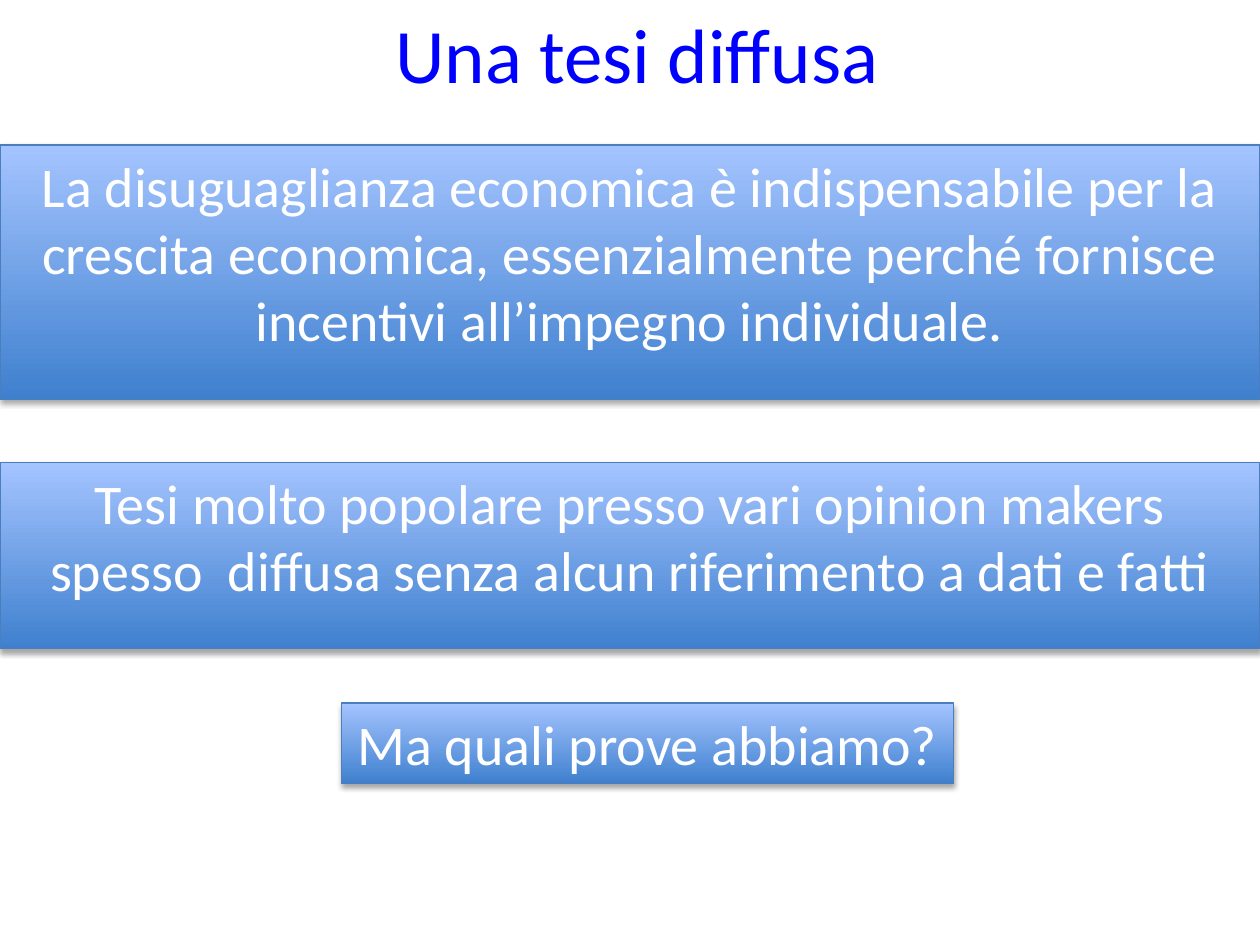
from dataclasses import dataclass

from lxml.etree import SubElement
from pptx import Presentation
from pptx.dml.color import RGBColor
from pptx.enum.shapes import MSO_SHAPE
from pptx.enum.text import MSO_ANCHOR, MSO_AUTO_SIZE, PP_ALIGN
from pptx.oxml.ns import qn
from pptx.util import Inches, Pt


@dataclass(frozen=True)
class Theme:
    font: str = "Calibri"
    title_size: int = 44
    body_size: int = 32
    title: str = "0000FF"
    body: str = "FFFFFF"
    outline: str = "4B7EBC"
    gradient: tuple = ("3F80CE", "A4C4FF")
    shadow: str = "000000"


theme = Theme()


def write_text(box, text, size, color, anchor, wrap=True):
    frame = box.text_frame
    frame.text = text
    frame.word_wrap = wrap
    frame.vertical_anchor = anchor
    para = frame.paragraphs[0]
    para.alignment = PP_ALIGN.CENTER
    font = para.runs[0].font
    font.name = theme.font
    font.size = Pt(size)
    font.color.rgb = RGBColor.from_string(color)


def add_shadow(box):
    box.shadow.inherit = False
    effects = box._element.spPr.find(qn("a:effectLst"))
    shadow = SubElement(effects, qn("a:outerShdw"), blurRad=str(Pt(3.1)),
                        dist=str(Pt(1.8)), dir="5400000", rotWithShape="0")
    color = SubElement(shadow, qn("a:srgbClr"), val=theme.shadow)
    SubElement(color, qn("a:alpha"), val="35000")


deck = Presentation()
deck.slide_width = Inches(10)
deck.slide_height = Inches(7.5)
page = deck.slides.add_slide(deck.slide_layouts[6])

title = page.shapes.add_textbox(Inches(0.53), Inches(0), Inches(9.19), Inches(0.84))
write_text(title, "Una tesi diffusa ", theme.title_size, theme.title, MSO_ANCHOR.MIDDLE)

panels = [
    (0, 1.15, 10, 2.02, True,
     "La disuguaglianza economica è indispensabile per la crescita economica, "
     "essenzialmente perché fornisce incentivi all’impegno individuale."),
    (0, 3.67, 10, 1.48, True,
     "Tesi molto popolare presso vari opinion makers "
     "spesso  diffusa senza alcun riferimento a dati e fatti"),
    (2.71, 5.58, 4.86, 0.64, False, "Ma quali prove abbiamo?"),
]
for left, top, width, height, wrap, text in panels:
    panel = page.shapes.add_shape(MSO_SHAPE.RECTANGLE, Inches(left), Inches(top),
                                  Inches(width), Inches(height))
    panel.fill.gradient()
    panel.fill.gradient_angle = 90
    for stop, color in zip(panel.fill.gradient_stops, theme.gradient):
        stop.color.rgb = RGBColor.from_string(color)
    panel.line.color.rgb = RGBColor.from_string(theme.outline)
    panel.line.width = Pt(0.75)
    add_shadow(panel)
    write_text(panel, text, theme.body_size, theme.body, MSO_ANCHOR.TOP, wrap)
    panel.text_frame.auto_size = MSO_AUTO_SIZE.SHAPE_TO_FIT_TEXT

deck.save("out.pptx")
